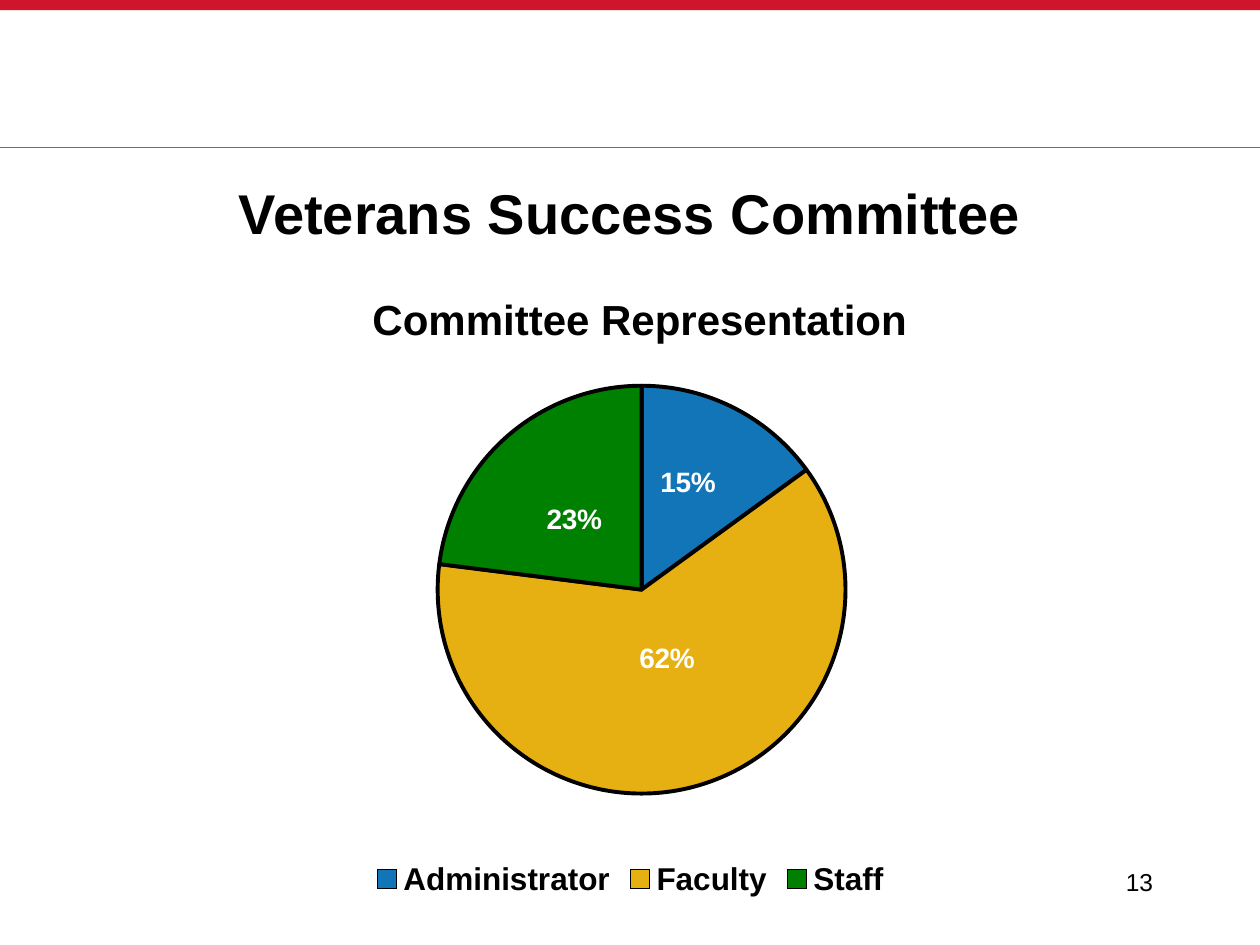
from lxml import etree
from pptx import Presentation
from pptx.chart.data import CategoryChartData
from pptx.dml.color import RGBColor
from pptx.enum.chart import XL_CHART_TYPE, XL_LABEL_POSITION, XL_LEGEND_POSITION
from pptx.enum.shapes import MSO_CONNECTOR, MSO_SHAPE
from pptx.enum.text import MSO_ANCHOR, PP_ALIGN
from pptx.oxml.ns import qn
from pptx.util import Inches, Pt

PIE = XL_CHART_TYPE.PIE
MID = XL_LABEL_POSITION.CENTER
LOW = XL_LEGEND_POSITION.BOTTOM
LINE = MSO_CONNECTOR.STRAIGHT
RECT = MSO_SHAPE.RECTANGLE
TOP, BASE = MSO_ANCHOR.TOP, MSO_ANCHOR.BOTTOM
LEFT, RIGHT, CENTER = PP_ALIGN.LEFT, PP_ALIGN.RIGHT, PP_ALIGN.CENTER

FONT = "Arial"
COLORS = {"red": "CF142B", "gray": "746F66", "black": "000000", "white": "FFFFFF",
          "blue": "1275B8", "gold": "E6B012", "green": "008000"}

# name, percent, color, label shift as a share of the chart size
PARTS = [("Administrator", 15, "blue", (0, -0.025)),
         ("Faculty", 62, "gold", (0, -0.045)),
         ("Staff", 23, "green", (0, 0.01))]


def color(name):
    return RGBColor.from_string(COLORS[name])


def style(font, size, bold=False, tint="black"):
    font.name, font.size, font.bold = FONT, Pt(size), bold
    font.color.rgb = color(tint)


def write(frame, text, align=LEFT, **look):
    """Put one formatted paragraph in a text frame."""
    para = frame.paragraphs[0]
    para.alignment = align
    run = para.add_run()
    run.text = text
    style(run.font, **look)


def layout(kind=None, **parts):
    """Make a manual chart layout; parts are shares of the chart size."""
    root = etree.Element(qn("c:layout"))
    manual = etree.SubElement(root, qn("c:manualLayout"))
    if kind:
        parts = {"layoutTarget": kind, "xMode": "edge", "yMode": "edge", **parts}
    for tag, val in parts.items():
        etree.SubElement(manual, qn("c:" + tag)).set("val", str(val))
    return root


class Page:
    def __init__(self, deck):
        self.slide = deck.slides.add_slide(deck.slide_layouts[6])
        self.shapes = self.slide.shapes

    def bar(self, box, fill):
        shape = self.shapes.add_shape(RECT, *map(Inches, box))
        shape.shadow.inherit = False
        shape.fill.solid()
        shape.fill.fore_color.rgb = color(fill)
        shape.line.fill.background()

    def rule(self, ends, tint, width):
        line = self.shapes.add_connector(LINE, *map(Inches, ends))
        line.line.color.rgb = color(tint)
        line.line.width = Pt(width)
        etree.SubElement(line._element.spPr, qn("a:effectLst"))

    def text(self, box, text, anchor=TOP, **look):
        frame = self.shapes.add_textbox(*map(Inches, box)).text_frame
        frame.word_wrap = True
        frame.vertical_anchor = anchor
        write(frame, text, **look)

    def pie(self, box, title, parts):
        data = CategoryChartData()
        data.categories = [part[0] for part in parts]
        data.add_series("Series 1", [part[1] for part in parts])
        chart = self.shapes.add_chart(PIE, *map(Inches, box), data).chart
        style(chart.font, 10)

        chart.has_title = True
        head = chart.chart_title
        write(head.text_frame, title, size=24, bold=True)
        for old in head._element.findall(qn("c:layout")):
            head._element.remove(old)
        head._element.find(qn("c:tx")).addnext(layout(xMode="edge", yMode="edge", x=0.27, y=0.05))

        chart.has_legend = True
        chart.legend.position = LOW
        chart.legend.include_in_layout = False
        style(chart.legend.font, 18, bold=True)

        area = chart._chartSpace.chart.plotArea
        for old in area.findall(qn("c:layout")):
            area.remove(old)
        area.insert(0, layout("inner", x=0.333, y=0.205, w=0.353, h=0.627))

        plot = chart.plots[0]
        plot.vary_by_categories = True
        for i, (_, _, fill, shift) in enumerate(parts):
            self.slice(plot.series[0].points[i], fill, shift)

    def slice(self, point, fill, shift):
        form = point.format
        form.fill.solid()
        form.fill.fore_color.rgb = color(fill)
        form.line.color.rgb = color("black")
        form.line.width = Pt(2.25)
        label = point.data_label
        style(label.font, 16, bold=True, tint="white")
        label.position = MID
        node = label._dLbl
        node.find(qn("c:showVal")).set("val", "0")
        node.find(qn("c:showPercent")).set("val", "1")
        node.find(qn("c:idx")).addnext(layout(x=shift[0], y=shift[1]))


def main():
    deck = Presentation()
    deck.slide_width, deck.slide_height = Inches(10), Inches(7.5)
    page = Page(deck)
    page.bar((0, 0, 10, 0.08), "red")
    page.rule((0, 1.17, 10, 1.17), "gray", 0.75)
    page.text((0.5, 1.17, 9, 0.83), "Veterans Success Committee",
              anchor=BASE, align=CENTER, size=32, bold=True)
    page.pie((0.42, 2, 9.17, 5.17), "Committee Representation", PARTS)
    page.text((7.17, 6.83, 2.08, 0.5), "13", align=RIGHT, size=14)
    deck.save("out.pptx")


if __name__ == "__main__":
    main()
